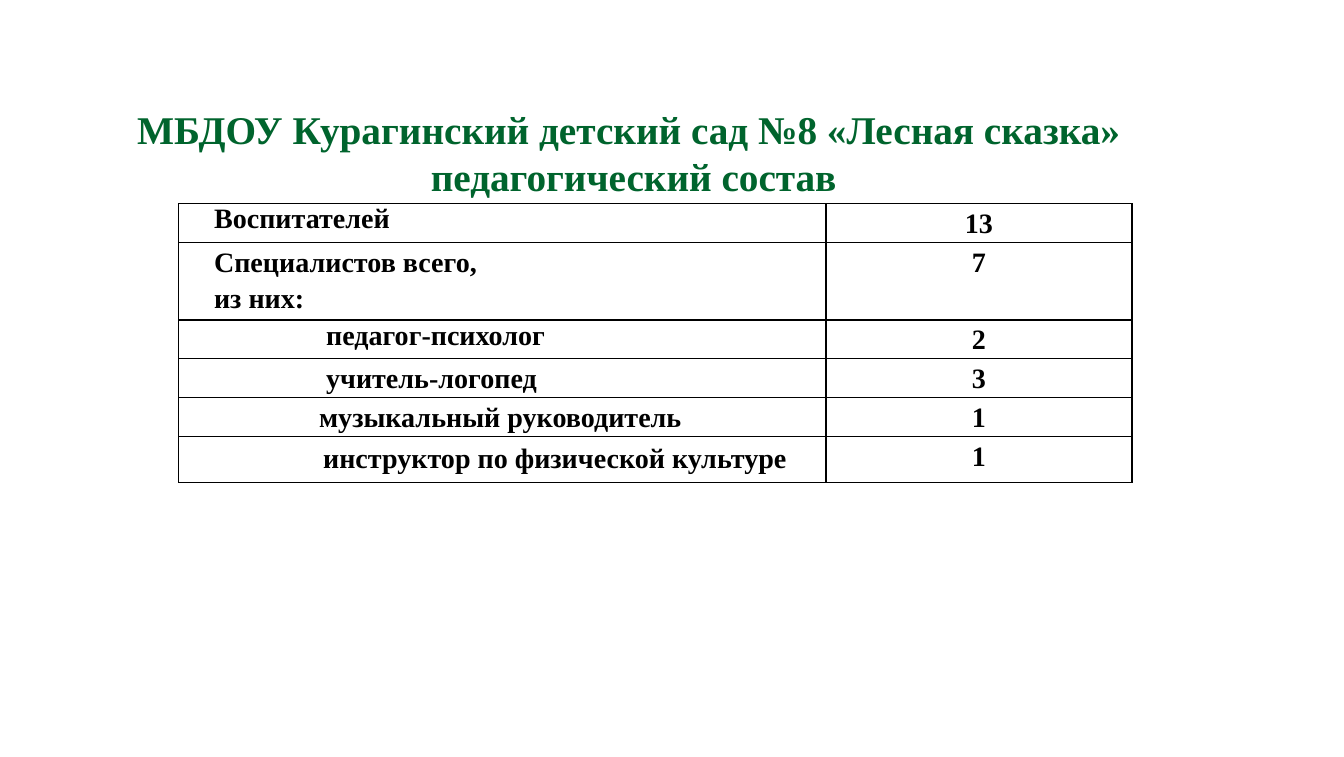
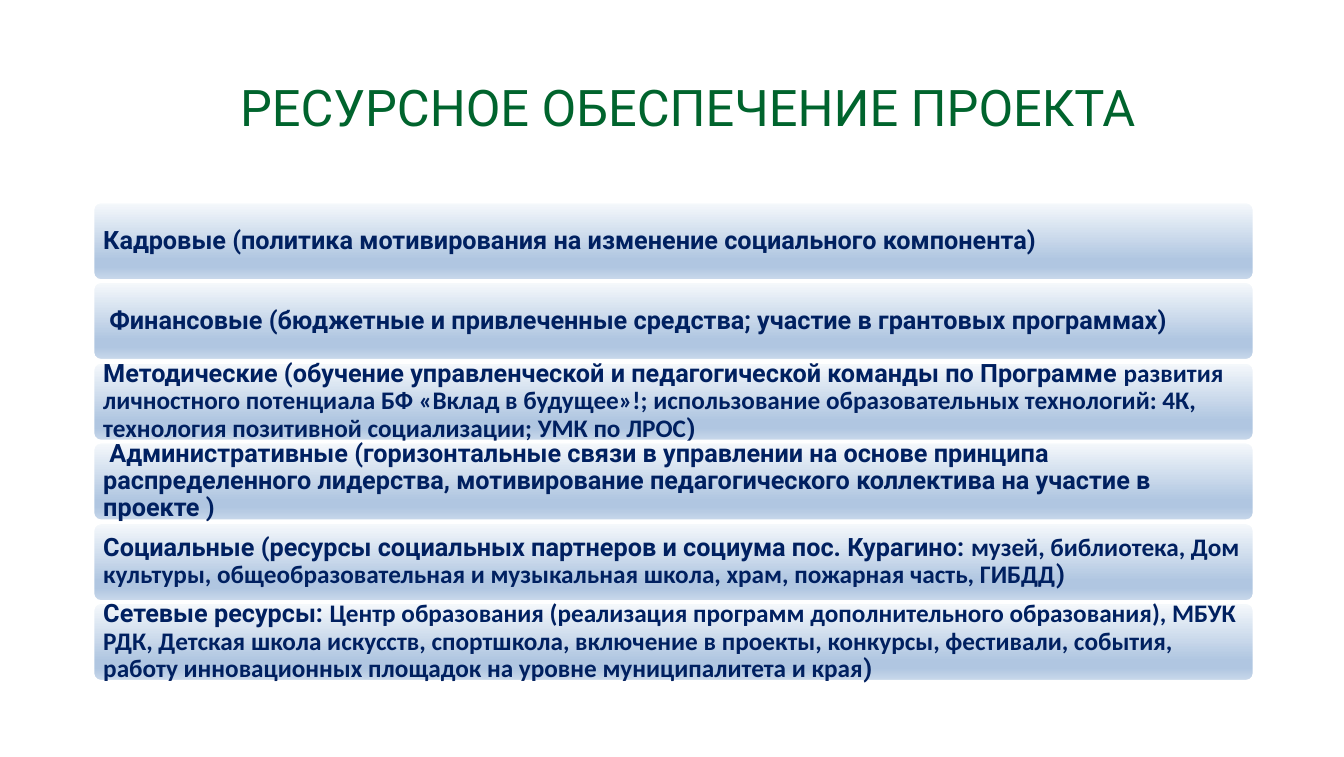
"""Builds two slides on the staff and the resources of a kindergarten project."""
import pptx
import pptx.dml.color
import pptx.enum.shapes
import pptx.enum.text
import pptx.oxml.ns
import pptx.util
from lxml import etree

ALIGN = pptx.enum.text.PP_ALIGN
ANCHOR = pptx.enum.text.MSO_ANCHOR
qn = pptx.oxml.ns.qn

SERIF, SANS, BODY = "Times New Roman", "Roboto", "Calibri"
GREEN, NAVY, BLACK, WHITE = "00642D", "002060", "000000", "FFFFFF"
BAR_STOPS = [(0, "F6F9FC"), (74, "B0C6E1"), (83, "B0C6E1"), (100, "CAD9EB")]
PX_PER_INCH = 100


def px(length):
    return pptx.util.Inches(length / PX_PER_INCH)


def rgb(value):
    return pptx.dml.color.RGBColor.from_string(value)


class Deck:
    """Holds the presentation, its style and the current slide."""

    def __init__(self, width, height):
        self.deck = pptx.Presentation()
        self.deck.slide_width, self.deck.slide_height = px(width), px(height)
        self.slide = None

    def new_slide(self):
        self.slide = self.deck.slides.add_slide(self.deck.slide_layouts[6])

    def inset(self, holder, left, top, right, bottom):
        holder.margin_left, holder.margin_top = px(left), px(top)
        holder.margin_right, holder.margin_bottom = px(right), px(bottom)

    def paragraph(self, frame, runs, size, color, bold=True, align=ALIGN.LEFT,
                  spacing=1.0, margin=0, indent=0, first=True):
        paragraph = frame.paragraphs[0] if first else frame.add_paragraph()
        properties = paragraph._p.get_or_add_pPr()
        properties.set("marL", str(px(margin)))
        properties.set("indent", str(px(indent)))
        paragraph.alignment = align
        paragraph.line_spacing = spacing
        for text, font in runs:
            run = paragraph.add_run()
            run.text = text
            run.font.name = font
            run.font.size = pptx.util.Pt(size)
            run.font.bold = bold
            run.font.color.rgb = rgb(color)

    def title(self, box, lines, font, size, bold, insets, spacing=1.0):
        frame = self.slide.shapes.add_textbox(*map(px, box)).text_frame
        frame.word_wrap = True
        self.inset(frame, *insets)
        for number, (line, margin) in enumerate(lines):
            self.paragraph(frame, [(line, font)], size, GREEN, bold, ALIGN.CENTER,
                           spacing, margin, first=number == 0)

    def bar(self, box, runs, indent):
        bar = self.slide.shapes.add_shape(
            pptx.enum.shapes.MSO_SHAPE.ROUNDED_RECTANGLE, *map(px, box))
        bar.adjustments[0] = 0.1
        bar.shadow.inherit = False
        bar.fill.gradient()
        bar.fill.gradient_angle = 270
        stops = bar.element.spPr.find(".//" + qn("a:gsLst"))
        stops.clear()
        for position, color in BAR_STOPS:
            stop = etree.SubElement(stops, qn("a:gs"), pos=str(position * 1000))
            etree.SubElement(stop, qn("a:srgbClr"), val=color)
        bar.line.color.rgb = rgb(WHITE)
        bar.line.width = pptx.util.Pt(2)
        frame = bar.text_frame
        frame.word_wrap = True
        frame.vertical_anchor = ANCHOR.MIDDLE
        self.inset(frame, 8, 0, 8, 0)
        self.paragraph(frame, runs, 18, NAVY, spacing=0.9, indent=indent)

    def cell(self, cell, lines, align, spacing, margin=0, top=0):
        self.inset(cell, 7, top, 7, 0)
        for number, line in enumerate(lines):
            self.paragraph(cell.text_frame, [(line, SERIF)], 20, BLACK, True, align,
                           spacing, margin, first=number == 0)
        properties = cell._tc.get_or_add_tcPr()
        for side in ("lnL", "lnR", "lnT", "lnB"):
            border = etree.SubElement(properties, qn("a:" + side),
                                      w=str(pptx.util.Pt(1)))
            fill = etree.SubElement(border, qn("a:solidFill"))
            etree.SubElement(fill, qn("a:srgbClr"), val=BLACK)
        cell.fill.background()

    def staff_table(self, left, top, widths, rows):
        height = sum(row[0] for row in rows)
        table = self.slide.shapes.add_table(
            len(rows), len(widths), px(left), px(top), px(sum(widths)), px(height)).table
        table.first_row = table.horz_banding = False
        for column, width in zip(table.columns, widths):
            column.width = px(width)
        for index, (height, lines, count, margin, spacing, top) in enumerate(rows):
            table.rows[index].height = px(height)
            self.cell(table.cell(index, 0), lines, ALIGN.LEFT, spacing, margin, top)
            self.cell(table.cell(index, 1), [count], ALIGN.CENTER, 1.15)


STAFF = [
    (38, ["Воспитателей"], "13", 28, 1.0, 0),
    (76, ["Специалистов всего,", "из них:"], "7", 28, 1.15, 0),
    (38, ["педагог-психолог"], "2", 139, 1.0, 0),
    (38, ["учитель-логопед"], "3", 139, 1.15, 0),
    (38, ["музыкальный руководитель"], "1", 132, 1.15, 0),
    (46, ["инструктор по физической культуре"], "1", 136, 1.0, 7),
]

RESOURCES = [
    (0, [("Кадровые (политика мотивирования на изменение социального компонента)", SANS)]),
    (6, [("Финансовые (бюджетные и привлеченные средства; участие в грантовых "
          "программах)", SANS)]),
    (0, [("Методические (обучение управленческой и педагогической команды по "
          "Программе ", SANS),
         ("развития личностного потенциала БФ «Вклад в будущее»!; использование "
          "образовательных технологий: 4К, технология позитивной социализации; "
          "УМК по ЛРОС", BODY),
         (")", SANS)]),
    (6, [("Административные (горизонтальные связи в управлении на основе принципа "
          "распределенного лидерства, мотивирование педагогического коллектива на "
          "участие в проекте )", SANS)]),
    (0, [("Социальные (ресурсы социальных партнеров и социума пос. Курагино: ", SANS),
         ("музей, библиотека, Дом культуры, общеобразовательная и музыкальная школа, "
          "храм, пожарная часть, ГИБДД", BODY),
         (")", SANS)]),
    (0, [("Сетевые ресурсы: ", SANS),
         ("Центр образования (реализация программ дополнительного образования), МБУК "
          "РДК, Детская школа искусств, спортшкола, включение в проекты, конкурсы, "
          "фестивали, события, работу инновационных площадок на уровне муниципалитета "
          "и края", BODY),
         (")", SANS)]),
]


def main():
    deck = Deck(1331, 750)

    deck.new_slide()
    deck.title((75, 99, 1095, 104),
               [("МБДОУ Курагинский детский сад №8 «Лесная сказка»", 0),
                ("педагогический состав", 10)],
               SERIF, 28, True, (10, 5, 10, 5))
    deck.staff_table(177, 202, [641, 303], STAFF)

    deck.new_slide()
    deck.title((16, 82, 1331, 55), [("РЕСУРСНОЕ ОБЕСПЕЧЕНИЕ ПРОЕКТА", 0)],
               SANS, 36, False, (0, 0, 0, 0), 0.9)
    for number, (indent, runs) in enumerate(RESOURCES):
        deck.bar((92, 200 + number * 159 // 2, 1150, 78), runs, indent)

    deck.deck.save("out.pptx")


if __name__ == "__main__":
    main()
